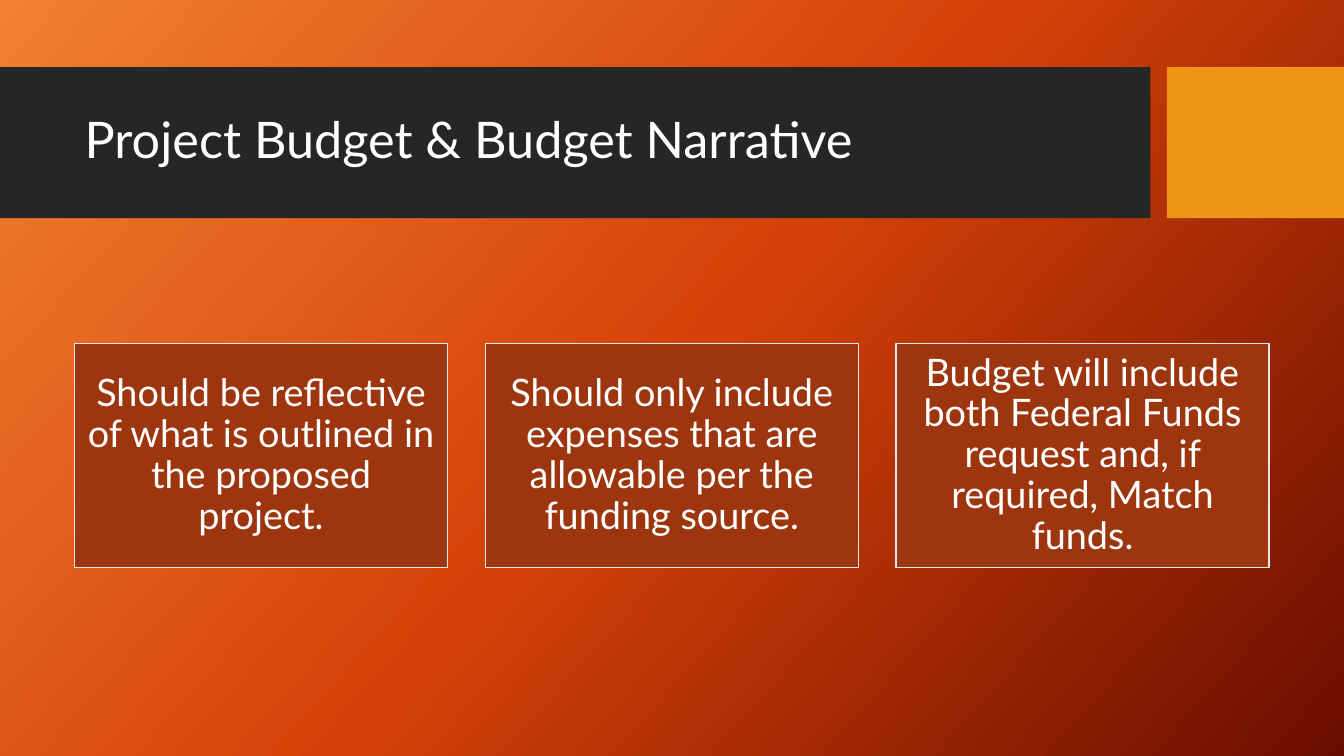
import copy
from dataclasses import dataclass

import pptx
import pptx.dml.color
import pptx.enum.shapes
import pptx.enum.text
import pptx.oxml.ns
import pptx.util

Cm = pptx.util.Cm
Pt = pptx.util.Pt
RGB = pptx.dml.color.RGBColor.from_string
RECT = pptx.enum.shapes.MSO_SHAPE.RECTANGLE
ALIGN = pptx.enum.text.PP_ALIGN


@dataclass(frozen=True)
class Theme:
    font: str = "Lato"
    text: str = "FFFFFF"
    band: str = "262626"
    accent: str = "F09415"
    card: str = "9D360E"
    outline: str = "E7E6E6"
    gradient: tuple = ((0, "F18031"), (0.5, "D54209"), (1, "6A0D00"))
    title_size: int = 36
    card_size: int = 27


theme = Theme()


def add_rect(s, x, y, w, h, color):
    sp = s.shapes.add_shape(RECT, Cm(x), Cm(y), Cm(w), Cm(h))
    sp.shadow.inherit = False
    sp.fill.solid()
    sp.fill.fore_color.rgb = RGB(color)
    sp.line.fill.background()
    return sp


def set_text(sp, text, size, align):
    tf = sp.text_frame
    tf.text = text
    tf.word_wrap = True
    tf.auto_size = pptx.enum.text.MSO_AUTO_SIZE.NONE
    tf.vertical_anchor = pptx.enum.text.MSO_ANCHOR.MIDDLE
    p = tf.paragraphs[0]
    p.alignment = align
    p.line_spacing = 0.9
    r = p.runs[0]
    r.font.name = theme.font
    r.font.size = Pt(size)
    r.font.color.rgb = RGB(theme.text)
    return tf


prs = pptx.Presentation()
prs.slide_width = Cm(33.87)
prs.slide_height = Cm(19.05)
s = prs.slides.add_slide(prs.slide_layouts[5])

fill = s.background.fill
fill.gradient()
fill.gradient_angle = 318
stops = s.element.find(".//" + pptx.oxml.ns.qn("a:gsLst"))
stops.insert(1, copy.deepcopy(stops[0]))
for stop, (position, color) in zip(fill.gradient_stops, theme.gradient):
    stop.position = position
    stop.color.rgb = RGB(color)

title = s.shapes.title
for x, w, color in ((0, 28.99, theme.band), (29.41, 4.46, theme.accent)):
    band = add_rect(s, x, 1.69, w, 3.81, color)
    title.element.addprevious(band.element)

title.left, title.top = Cm(1.88), Cm(2.08)
title.width, title.height = Cm(26.7), Cm(3)
set_text(title, "Project Budget & Budget Narrative", theme.title_size, ALIGN.LEFT)

requirements = [
    "Should be reflective of what is outlined in the proposed project.",
    "Should only include expenses that are allowable per the funding source.",
    "Budget will include both Federal Funds request and, if required, Match funds.",
]
for i, requirement in enumerate(requirements):
    card = add_rect(s, 1.88 + i * 10.35, 8.66, 9.4, 5.64, theme.card)
    card.line.color.rgb = RGB(theme.outline)
    card.line.width = Pt(1)
    tf = set_text(card, requirement, theme.card_size, ALIGN.CENTER)
    tf.margin_left = tf.margin_right = Cm(0.28)
    tf.margin_top = tf.margin_bottom = Cm(0.28)

prs.save("out.pptx")
